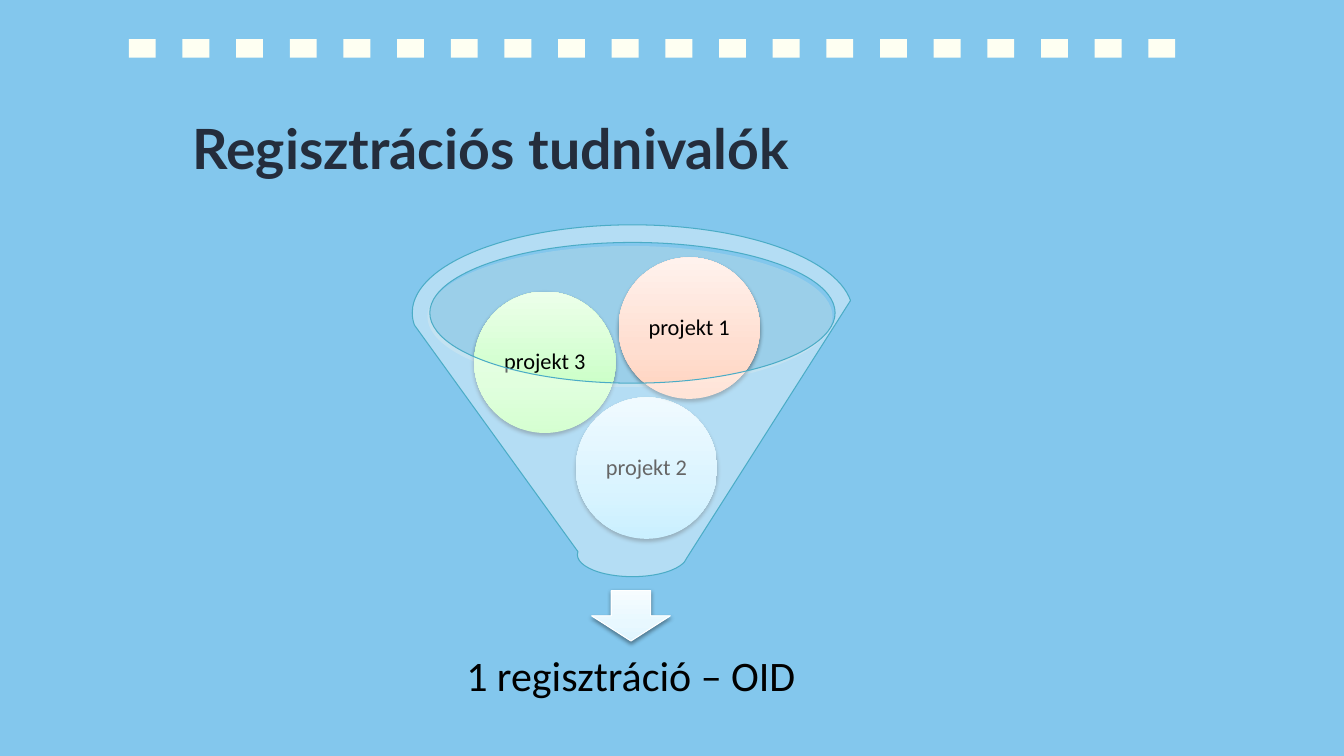
"""Builds the registration slide: three projects pass a funnel into one OID."""
import pptx
import pptx.util
import pptx.dml.color
import pptx.enum.shapes
import pptx.enum.text
import pptx.oxml
import pptx.oxml.ns

Pt = pptx.util.Pt
KIND = pptx.enum.shapes.MSO_SHAPE
ALIGN = pptx.enum.text.PP_ALIGN
ANCHOR = pptx.enum.text.MSO_ANCHOR
NS = pptx.oxml.ns.nsdecls("a")

TITLE = "Regisztrációs tudnivalók"
RESULT = "1 regisztráció – OID"
BALLS = [
    ("projekt 2", 411.3, 283.9, ("A7E6FF", "C1EDFF", "E7F8FF")),
    ("projekt 3", 338.7, 208.3, ("B9FFB2", "CDFFC9", "ECFFEA")),
    ("projekt 1", 441.8, 183.9, ("FFD2BD", "FFDED0", "FFF2ED")),
]
ARROW = ("DFF5FF", "E8F8FF", "F6FCFF")
STOPS = (0, 35, 100)
DASHES, FIRST, PITCH = 20, 92, 38.33
BALL = 101


def rgb(code):
    return pptx.dml.color.RGBColor.from_string(code)


def write(frame, text, size=16, font="Calibri", color="000000", bold=False,
          align=ALIGN.CENTER, anchor=ANCHOR.MIDDLE, inset=0, space=0.9):
    frame.word_wrap = True
    frame.auto_size = pptx.enum.text.MSO_AUTO_SIZE.NONE
    frame.vertical_anchor = anchor
    frame.margin_left = frame.margin_right = Pt(inset)
    frame.margin_top = frame.margin_bottom = Pt(inset)
    para = frame.paragraphs[0]
    para.alignment = align
    para.line_spacing = space
    run = para.add_run()
    run.text = text
    run.font.size, run.font.name, run.font.bold = Pt(size), font, bold
    run.font.color.rgb = rgb(color)


def draw(kind, box, fill=None, alpha=100, line=None):
    shape = slide.shapes.add_shape(kind, *map(Pt, box))
    shape.shadow.inherit = False
    if fill:
        shape.fill.solid()
        shape.fill.fore_color.rgb = rgb(fill)
    if alpha < 100:
        tint = shape.element.spPr.find(".//" + pptx.oxml.ns.qn("a:srgbClr"))
        tint.append(pptx.oxml.parse_xml(f'<a:alpha {NS} val="{alpha * 1000}"/>'))
    if line:
        shape.line.color.rgb = rgb(line)
        shape.line.width = Pt(0.75)
    else:
        shape.line.fill.background()
    return shape


def shade(shape, colors):
    shape.fill.gradient()
    shape.fill.gradient_angle = 90
    props = shape.element.spPr
    stops = props.find(".//" + pptx.oxml.ns.qn("a:gsLst"))
    for old in list(stops):
        stops.remove(old)
    for pos, code in zip(STOPS, colors):
        stops.append(pptx.oxml.parse_xml(
            f'<a:gs {NS} pos="{pos * 1000}"><a:srgbClr val="{code}"/></a:gs>'))
    props.find(pptx.oxml.ns.qn("a:effectLst")).append(pptx.oxml.parse_xml(
        f'<a:outerShdw {NS} blurRad="{Pt(3.1)}" dist="{Pt(1.6)}" dir="5400000" '
        'rotWithShape="0"><a:srgbClr val="000000"><a:alpha val="38000"/>'
        '</a:srgbClr></a:outerShdw>'))


deck = pptx.Presentation()
deck.slide_width, deck.slide_height = Pt(960), Pt(540)
slide = deck.slides.add_slide(deck.slide_layouts[5])
slide.background.fill.solid()
slide.background.fill.fore_color.rgb = rgb("83C7ED")

for num in range(DASHES):
    draw(KIND.RECTANGLE, (FIRST + num * PITCH, 28, 19.2, 13.2), "FEFFF2")

title = slide.shapes.title
title.left, title.top, title.width, title.height = map(Pt, (137.5, 73.4, 643.7, 55.5))
write(title.text_frame, TITLE, size=39.6, font="Lato", color="242D3C", bold=True,
      align=ALIGN.LEFT, anchor=ANCHOR.TOP, space=Pt(55.5))

draw(KIND.OVAL, (305.3, 175.7, 289.4, 100.8), "C1DBE5", alpha=40)
shade(draw(KIND.DOWN_ARROW, (422.6, 421.9, 56.2, 36), line="FFFFFF"), ARROW)
label = slide.shapes.add_textbox(*map(Pt, (316.1, 450.7, 269.3, 67.7)))
write(label.text_frame, RESULT, size=30, inset=16.6)

for name, left, top, colors in BALLS:
    ball = draw(KIND.OVAL, (left, top, BALL, BALL))
    shade(ball, colors)
    write(ball.text_frame, name, inset=1.4)

draw(KIND.FUNNEL, (294.5, 160.6, 314.6, 251.3), "FFFFFF", alpha=40, line="4BACC6")

deck.save("out.pptx")
